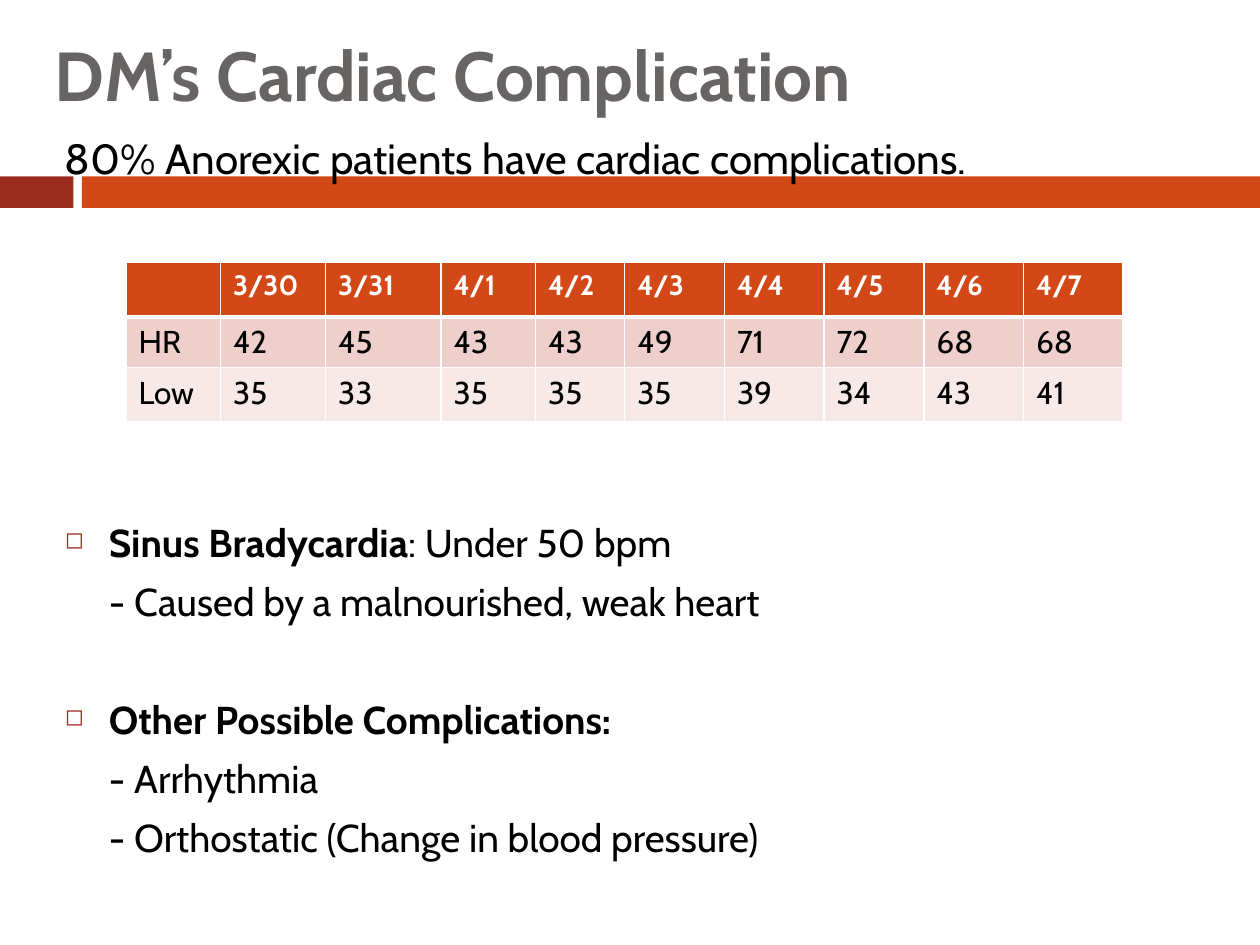
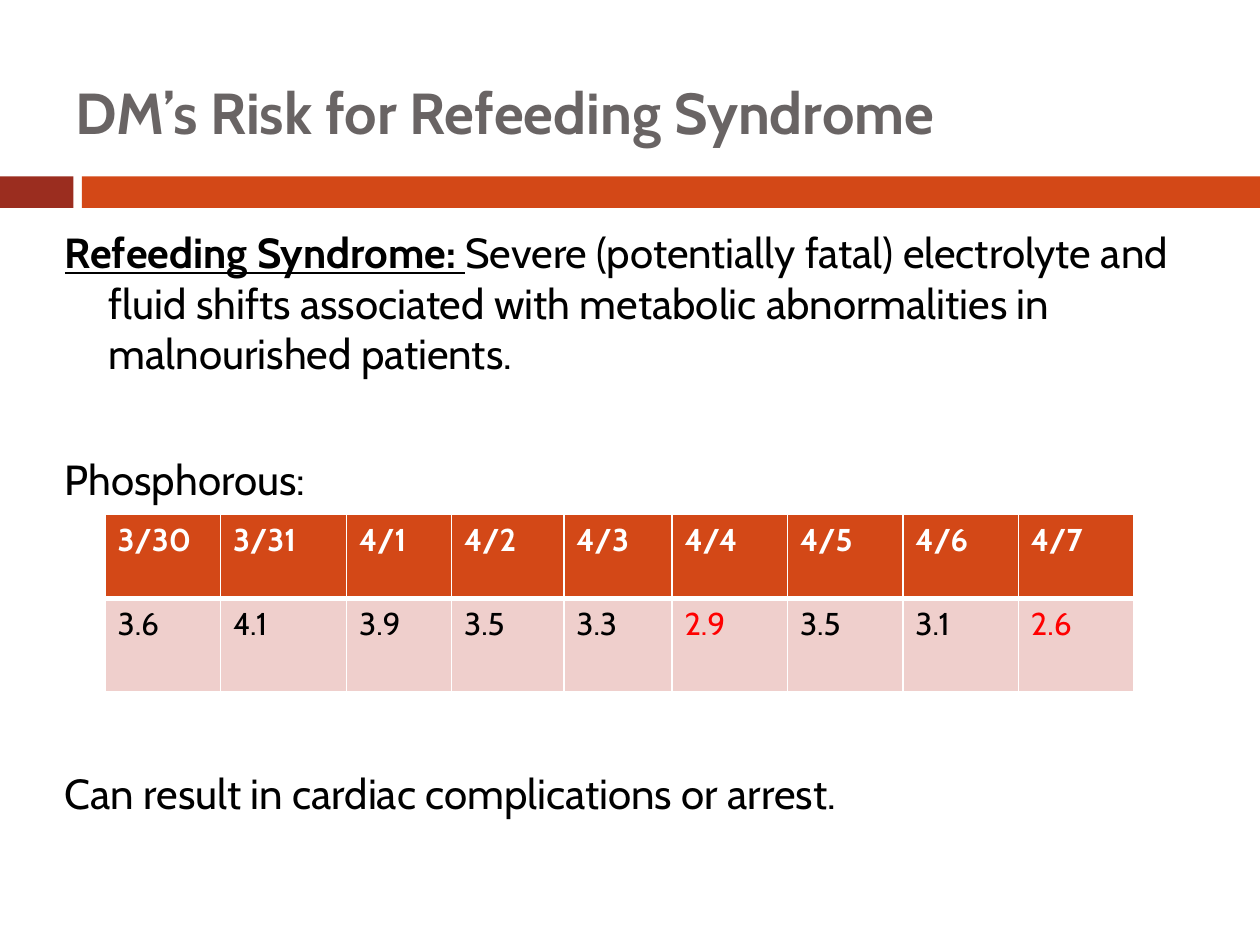
from dataclasses import dataclass, field

from lxml.etree import SubElement
from pptx import Presentation
from pptx.dml.color import RGBColor
from pptx.enum.shapes import MSO_SHAPE
from pptx.enum.text import MSO_ANCHOR, MSO_AUTO_SIZE, PP_ALIGN
from pptx.oxml.ns import qn
from pptx.util import Inches, Pt

COLUMNS, ROWS = 120, 90
TITLE_ONLY = 5


@dataclass(frozen=True)
class Theme:
    font: str = "Cabin"
    title: str = "696464"
    ink: str = "000000"
    alert: str = "FF0000"
    paper: str = "FFFFFF"
    accent: str = "D34817"
    accent_dark: str = "9B2D1F"
    table_rows: tuple = ("EFCFCC", "F7E9E8")
    cell_size: float = 18
    hang: float = 4.2
    line_gap: float = 7
    thin: float = 1
    thick: float = 3


@dataclass
class Line:
    """One body paragraph; place is 'hanging', 'bullet' or 'inset'."""
    runs: list
    place: str = "hanging"
    before: float = Theme.line_gap
    size: float = 24
    strong: dict = field(default_factory=lambda: {"bold": True})


class Deck:
    def __init__(self, theme):
        self.theme = theme
        self.prs = Presentation()
        self.prs.slide_width, self.prs.slide_height = Inches(10), Inches(7.5)
        self.slide = None

    def x(self, columns):
        return round(self.prs.slide_width * columns / COLUMNS)

    def y(self, rows):
        return round(self.prs.slide_height * rows / ROWS)

    def box(self, left, top, width, height):
        return self.x(left), self.y(top), self.x(width), self.y(height)

    def add_text(self, paragraph, text, size, color, **extra):
        run = paragraph.add_run()
        run.text = text
        run.font.color.rgb = RGBColor.from_string(color)
        formats = {"name": self.theme.font, "size": Pt(size), "bold": False, **extra}
        for name, value in formats.items():
            setattr(run.font, name, value)

    def new_slide(self, title, place, size):
        layout = self.prs.slide_layouts[TITLE_ONLY]
        self.slide = self.prs.slides.add_slide(layout)
        self.band(0, 7, self.theme.accent_dark)
        self.band(7.8, COLUMNS - 7.8, self.theme.accent)
        heading = self.slide.shapes.title
        for name, value in zip(("left", "top", "width", "height"), self.box(*place)):
            setattr(heading, name, value)
        frame = heading.text_frame
        frame.auto_size = MSO_AUTO_SIZE.NONE
        frame.vertical_anchor = MSO_ANCHOR.MIDDLE
        frame.paragraphs[0].alignment = PP_ALIGN.LEFT
        self.add_text(frame.paragraphs[0], title, size, self.theme.title, bold=True)

    def band(self, left, width, color):
        bar = self.slide.shapes.add_shape(
            MSO_SHAPE.RECTANGLE, *self.box(left, 16.8, width, 3))
        bar.shadow.inherit = False
        bar.fill.solid()
        bar.fill.fore_color.rgb = RGBColor.from_string(color)
        bar.line.fill.background()

    def body(self, place, lines):
        frame = self.slide.shapes.add_textbox(*self.box(*place)).text_frame
        frame.word_wrap = True
        for number, line in enumerate(lines):
            paragraph = frame.add_paragraph() if number else frame.paragraphs[0]
            paragraph.space_before = Pt(line.before if number else 0)
            self.indent(paragraph, line.place)
            for text, is_strong in line.runs:
                extra = line.strong if is_strong else {}
                self.add_text(paragraph, text, line.size, self.theme.ink, **extra)

    def indent(self, paragraph, place):
        properties = paragraph._p.get_or_add_pPr()
        hang = self.x(self.theme.hang)
        properties.set("marL", str(hang))
        properties.set("indent", str(0 if place == "inset" else -hang))
        if place == "bullet":
            color = SubElement(properties, qn("a:buClr"))
            SubElement(color, qn("a:srgbClr"), val=self.theme.accent_dark)
            SubElement(properties, qn("a:buSzPct"), val="60000")
            SubElement(properties, qn("a:buChar"), char="◻")

    def table(self, left, top, widths, heights, records, low_limit=None):
        """Draw a header row and data rows; values under low_limit turn red."""
        place = self.box(left, top, sum(widths), sum(heights))
        grid = self.slide.shapes.add_table(len(heights), len(widths), *place).table
        for column, width in zip(grid.columns, widths):
            column.width = self.x(width)
        for row, height in zip(grid.rows, heights):
            row.height = self.y(height)
        for r, (record, size) in enumerate(records):
            for c, text in enumerate(record):
                self.cell(grid.cell(r, c), text, r, size, low_limit)

    def cell(self, cell, text, row, size, low_limit):
        theme = self.theme
        is_header = row == 0
        self.borders(cell, row)
        cell.fill.solid()
        fill = theme.accent if is_header else theme.table_rows[(row - 1) % 2]
        cell.fill.fore_color.rgb = RGBColor.from_string(fill)
        color = theme.paper if is_header else theme.ink
        if low_limit and not is_header and float(text) < low_limit:
            color = theme.alert
        if text:
            self.add_text(cell.text_frame.paragraphs[0], text, size, color,
                          bold=is_header)

    def borders(self, cell, row):
        """White rules, thicker between the header and the first data row."""
        thick_side = {0: "B", 1: "T"}.get(row)
        properties = cell._tc.get_or_add_tcPr()
        for side in "LRTB":
            weight = self.theme.thick if side == thick_side else self.theme.thin
            rule = SubElement(properties, qn(f"a:ln{side}"), w=str(int(Pt(weight))))
            SubElement(SubElement(rule, qn("a:solidFill")), qn("a:srgbClr"),
                       val=self.theme.paper)


DATES = ["3/30", "3/31"] + [f"4/{day}" for day in range(1, 8)]
HEART_RATE = ["HR", "42", "45", "43", "43", "49", "71", "72", "68", "68"]
LOWEST_RATE = ["Low", "35", "33", "35", "35", "35", "39", "34", "43", "41"]
PHOSPHOROUS = ["3.6", "4.1", "3.9", "3.5", "3.3", "2.9", "3.5", "3.1", "2.6"]


def cardiac_slide(deck):
    size = 22.2
    deck.new_slide("DM’s Cardiac Complication", (4, 2.4, 108, 9.2), 39.6)
    deck.body((5, 12, 104, 70), [
        Line([("80% Anorexic patients have cardiac complications.", False)], size=24.1),
        Line([("Sinus Bradycardia", True), (": Under 50 bpm", False)],
             "bullet", before=192, size=size),
        Line([("- Caused by a malnourished, weak heart", False)], "inset", size=size),
        Line([("Other Possible Complications:", True)], "bullet", before=41, size=size),
        Line([("- Arrhythmia", False)], "inset", size=size),
        Line([("- Orthostatic (Change in blood pressure)", False)], "inset", size=size),
    ])
    deck.table(12, 25, [9, 10, 11, 9, 8.5] + [9.5] * 5, [5.2, 4.8, 5.2],
               [([""] + DATES, 16), (HEART_RATE, deck.theme.cell_size),
                (LOWEST_RATE, deck.theme.cell_size)])


def refeeding_slide(deck):
    deck.new_slide("DM’s Risk for Refeeding Syndrome", (6, 5, 107.4, 11.2), 33)
    definition = ("Severe (potentially fatal) electrolyte and fluid shifts associated "
                  "with metabolic abnormalities in malnourished patients.")
    deck.body((5, 21, 108, 62.4), [
        Line([("Refeeding Syndrome: ", True), (definition, False)],
             strong={"bold": True, "underline": True}),
        Line([("Phosphorous:", False)], before=43),
        Line([("Can result in cardiac complications or arrest.", False)], before=151),
    ])
    deck.table(10, 49, [11, 12, 10, 10.7, 10.3] + [11] * 4, [8, 8.9],
               [(DATES, deck.theme.cell_size), (PHOSPHOROUS, deck.theme.cell_size)],
               low_limit=3)


def main():
    deck = Deck(Theme())
    cardiac_slide(deck)
    refeeding_slide(deck)
    deck.prs.save("out.pptx")


if __name__ == "__main__":
    main()
